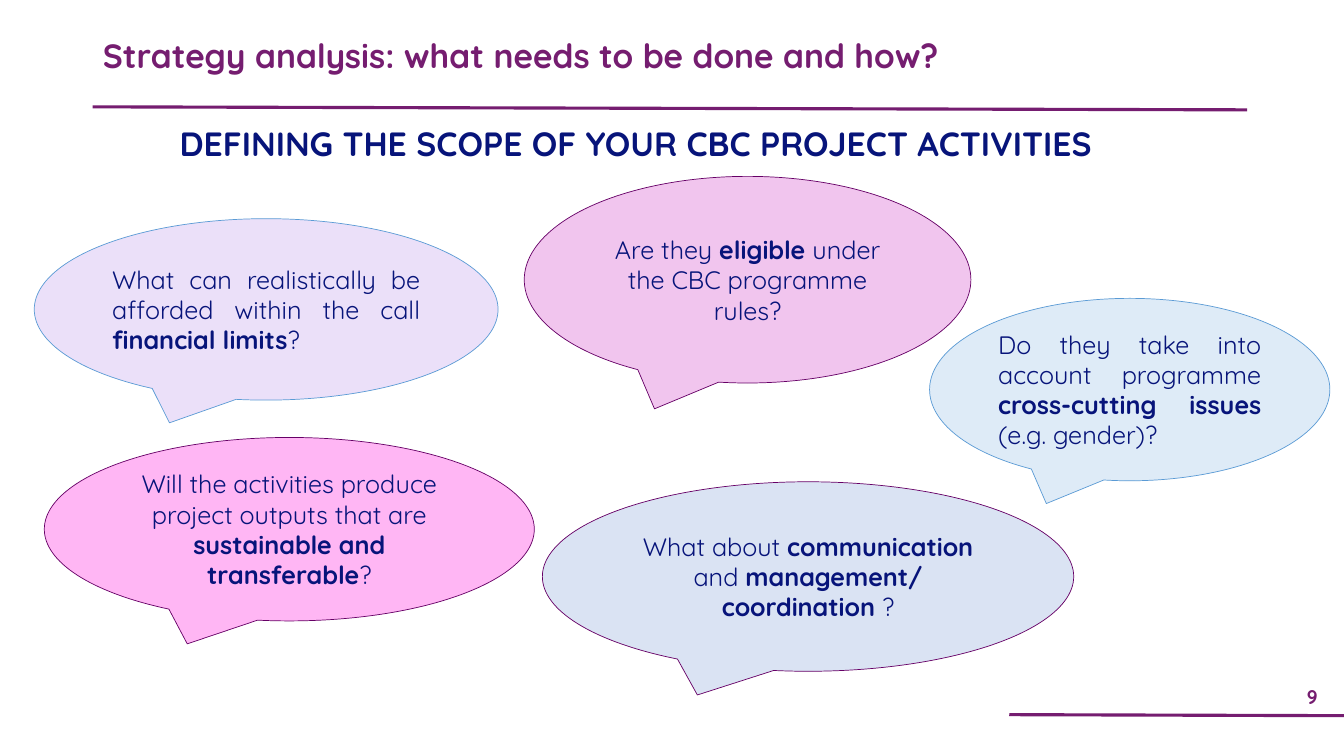
from dataclasses import dataclass

from pptx import Presentation
from pptx.dml.color import RGBColor
from pptx.enum import shapes, text
from pptx.oxml import parse_xml
from pptx.oxml.ns import nsdecls
from pptx.util import Inches, Pt

FONT = "Quicksand"
PURPLE = RGBColor(0x75, 0x1D, 0x70)
NAVY = RGBColor(0x07, 0x14, 0x7A)
BLUE_EDGE = RGBColor(0x5B, 0x9B, 0xD5)
PLUM_EDGE = RGBColor(0x66, 0x00, 0x66)
PALE_BLUE = RGBColor(0xDE, 0xEB, 0xF7)
LILAC = RGBColor(0xEB, 0xE0, 0xF9)
PINK = RGBColor(0xFF, 0xB6, 0xF4)
PERIWINKLE = RGBColor(0xDA, 0xE3, 0xF3)
ROSE = RGBColor(0xF1, 0xC5, 0xEE)

LEFT = text.PP_ALIGN.LEFT
CENTER = text.PP_ALIGN.CENTER
JUSTIFY = text.PP_ALIGN.JUSTIFY
TOP = text.MSO_ANCHOR.TOP
MIDDLE = text.MSO_ANCHOR.MIDDLE

Box = tuple[float, float, float, float]


@dataclass(frozen=True)
class Bubble:
    """A question; its phrases alternate between regular and bold text."""
    box: Box
    fill: RGBColor
    edge: RGBColor
    align: text.PP_ALIGN
    phrases: tuple[str, ...]


BUBBLES = (
    Bubble((9.22, 2.96, 3.97, 1.81), PALE_BLUE, BLUE_EDGE, JUSTIFY,
           ("Do they take into account programme ", "cross-cutting issues ",
            "(e.g. gender)?")),
    Bubble((0.34, 2.17, 4.6, 1.8), LILAC, BLUE_EDGE, JUSTIFY,
           ("What can realistically be afforded within the call ",
            "financial limits", "?")),
    Bubble((0.44, 4.34, 4.86, 1.82), PINK, PLUM_EDGE, CENTER,
           ("Will the activities produce project outputs that are ",
            "sustainable and transferable", "?")),
    Bubble((5.38, 4.78, 5.27, 1.88), PERIWINKLE, PLUM_EDGE, CENTER,
           ("What about ", "communication", " and ",
            "management/ coordination", " ?")),
    Bubble((5.2, 1.75, 4.43, 2.05), ROSE, PLUM_EDGE, CENTER,
           ("Are they ", "eligible ", "under the CBC programme rules?")),
)

RULES = ((0.92, 1.06, 12.37, 1.09), (10.01, 7.09, 13.33, 7.1))


def add_run(p, words: str, size: float, color: RGBColor, bold: bool) -> None:
    r = p.add_run()
    r.text = words
    r.font.name = FONT
    r.font.size = Pt(size)
    r.font.bold = bold
    r.font.color.rgb = color


def prepare_text(sp, align: text.PP_ALIGN, anchor: text.MSO_ANCHOR):
    """Set the text frame up and return its first paragraph."""
    tf = sp.text_frame
    tf.word_wrap = True
    tf.auto_size = text.MSO_AUTO_SIZE.NONE
    tf.vertical_anchor = anchor
    p = tf.paragraphs[0]
    p.alignment = align
    return p


def add_title(s, box: Box, words: str) -> None:
    sp = s.shapes.title
    sp.left, sp.top, sp.width, sp.height = map(Inches, box)
    p = prepare_text(sp, LEFT, TOP)
    p.line_spacing = 0.9
    add_run(p, words, 24, PURPLE, True)


def add_label(s, box: Box, words: str, size: float, color: RGBColor,
              anchor: text.MSO_ANCHOR, spacing: float = 1.0) -> None:
    sp = s.shapes.add_textbox(*map(Inches, box))
    p = prepare_text(sp, CENTER, anchor)
    p.line_spacing = spacing
    add_run(p, words, size, color, True)


def add_rule(s, ends: Box) -> None:
    rule = s.shapes.add_connector(shapes.MSO_CONNECTOR.STRAIGHT,
                                  *map(Inches, ends))
    rule.line.color.rgb = PURPLE
    rule.line.width = Pt(2.25)
    rule._element.spPr.append(parse_xml(f"<a:effectLst {nsdecls('a')}/>"))


def add_bubble(s, bubble: Bubble) -> None:
    sp = s.shapes.add_shape(shapes.MSO_SHAPE.OVAL_CALLOUT,
                            *map(Inches, bubble.box))
    sp.shadow.inherit = False
    sp.fill.solid()
    sp.fill.fore_color.rgb = bubble.fill
    sp.line.color.rgb = bubble.edge
    sp.line.width = Pt(0.5)
    p = prepare_text(sp, bubble.align, MIDDLE)
    for i, words in enumerate(bubble.phrases):
        add_run(p, words, 18, NAVY, bold=i % 2 == 1)


def main() -> None:
    prs = Presentation()
    prs.slide_width, prs.slide_height = Inches(13.33), Inches(7.5)
    s = prs.slides.add_slide(prs.slide_layouts.get_by_name("Title Only"))
    for ends in RULES:
        add_rule(s, ends)
    add_title(s, (0.92, 0.34, 9.73, 0.65),
              "Strategy analysis: what needs to be done and how?")
    add_label(s, (0.92, 1.22, 10.77, 0.5),
              "DEFINING THE SCOPE OF YOUR CBC PROJECT ACTIVITIES",
              24, NAVY, TOP, 0.9)
    add_label(s, (12.7, 6.73, 0.63, 0.36), "9", 14, PURPLE, MIDDLE)
    for bubble in BUBBLES:
        add_bubble(s, bubble)
    prs.save("out.pptx")


if __name__ == "__main__":
    main()
